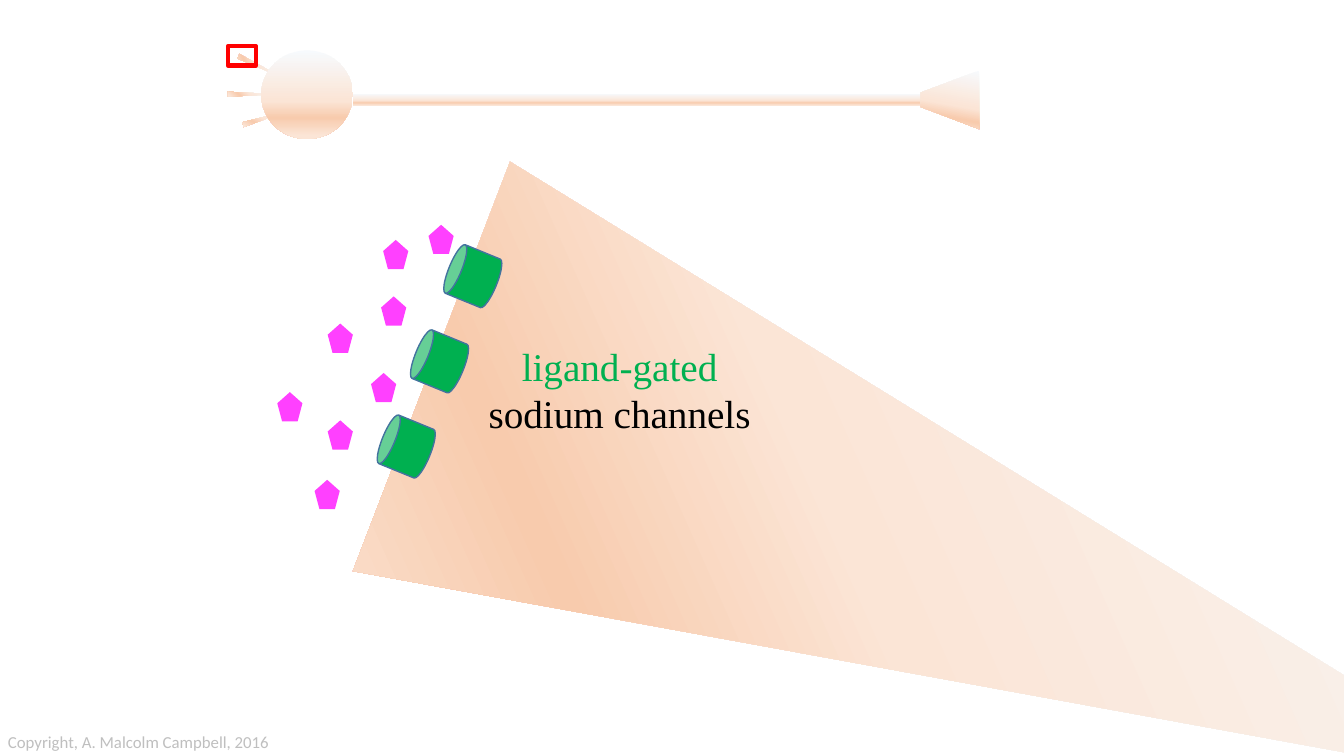
from lxml.etree import SubElement
from pptx import Presentation
from pptx.dml.color import RGBColor
from pptx.enum.shapes import MSO_SHAPE as Shape
from pptx.enum.text import MSO_AUTO_SIZE as Fit, PP_ALIGN as Align
from pptx.oxml.ns import qn
from pptx.util import Inches, Pt

GREEN = RGBColor(0x00, 0xB0, 0x50)
EDGE = RGBColor(0x43, 0x73, 0x9E)
PINK = RGBColor(0xFF, 0x40, 0xFF)
RED = RGBColor(0xFF, 0x00, 0x00)
BLACK = RGBColor(0x00, 0x00, 0x00)
GREY = RGBColor(0xBF, 0xBF, 0xBF)
SKIN = [
    (0, RGBColor(0xF7, 0xFA, 0xFD)),
    (57, RGBColor(0xFB, 0xE5, 0xD6)),
    (76, RGBColor(0xF8, 0xCB, 0xAD)),
    (96, RGBColor(0xFB, 0xE5, 0xD6)),
]


def shade(shape, angle):
    """Fill with the cell gradient, its angle clockwise in degrees."""
    shape.fill.gradient()
    grad = shape.element.spPr.find(qn("a:gradFill"))
    for child in list(grad):
        grad.remove(child)
    grad.set("rotWithShape", "1")
    stops = SubElement(grad, qn("a:gsLst"))
    for place, color in SKIN:
        stop = SubElement(stops, qn("a:gs"), pos=str(place * 1000))
        SubElement(stop, qn("a:srgbClr"), val=str(color))
    SubElement(grad, qn("a:lin"), ang=str(angle * 60000), scaled="0")


def draw(slide, kind, box, fill=None, angle=None, line=None, width=1, turn=0):
    shape = slide.shapes.add_shape(kind, *map(Inches, box))
    shape.shadow.inherit = False
    shape.rotation = turn
    if angle is not None:
        shade(shape, angle)
    elif fill is not None:
        shape.fill.solid()
        shape.fill.fore_color.rgb = fill
    else:
        shape.fill.background()
    if line is None:
        shape.line.fill.background()
    else:
        shape.line.color.rgb = line
        shape.line.width = Pt(width)
    return shape


def write(slide, box, lines, size, font, align=Align.LEFT, wrap=True):
    """Add a text box from (text, color) lines, one paragraph each."""
    frame = slide.shapes.add_textbox(*map(Inches, box)).text_frame
    frame.word_wrap = wrap
    frame.auto_size = Fit.SHAPE_TO_FIT_TEXT
    for i, (text, color) in enumerate(lines):
        para = frame.add_paragraph() if i else frame.paragraphs[0]
        para.alignment = align
        run = para.add_run()
        run.text = text
        run.font.size = Pt(size)
        run.font.name = font
        run.font.color.rgb = color


def add_neuron(slide, x, y):
    """Whole cell: dendrites, body, axon, terminal and the zoom frame."""
    for dx, dy, turn in [(0.3, 0, 116), (0.22, 0.27, 90), (0.36, 0.5, 73)]:
        draw(slide, Shape.ISOSCELES_TRIANGLE, (x + dx, y + dy, 0.05, 0.49),
             angle=45, turn=turn)
    draw(slide, Shape.OVAL, (x + 0.33, y + 0.08, 0.91, 0.88), angle=90)
    draw(slide, Shape.RECTANGLE, (x + 1.24, y + 0.51, 5.64, 0.12), angle=90)
    end = draw(slide, Shape.TRAPEZOID, (x + 6.87, y + 0.28, 0.58, 0.58),
               angle=190, turn=270)
    end.adjustments[0] = 0.377
    draw(slide, Shape.RECTANGLE, (x, y + 0.04, 0.28, 0.19), line=RED, width=3)


def add_ligands(slide, x, y):
    spots = [(1.03, 0.71), (1.05, 0.15), (1.5, 0), (0.37, 2.53),
             (0, 1.66), (0.5, 0.98), (0.5, 1.94), (0.93, 1.47)]
    for dx, dy in spots:
        draw(slide, Shape.REGULAR_PENTAGON, (x + dx, y + dy, 0.25, 0.29),
             fill=PINK)


def add_channels(slide, x, y):
    for i in range(3):
        draw(slide, Shape.CAN, (x - 0.33 * i, y + 0.845 * i, 0.52, 0.5),
             fill=GREEN, line=EDGE, turn=292.3)
    write(slide, (x + 0.26, y + 0.86, 2.91, 1.04),
          [("ligand-gated", GREEN), ("sodium channels", BLACK)],
          28, "Times New Roman", align=Align.CENTER)


def main():
    deck = Presentation()
    deck.slide_width, deck.slide_height = Inches(13.33), Inches(7.5)
    slide = deck.slides.add_slide(deck.slide_layouts[6])
    draw(slide, Shape.ISOSCELES_TRIANGLE, (7.51, -0.08, 4.35, 11.58),
         angle=45, turn=111)
    add_neuron(slide, 2.26, 0.42)
    add_ligands(slide, 2.75, 2.23)
    add_channels(slide, 4.43, 2.49)
    write(slide, (-0.02, 7.21, 2.82, 0.3),
          [("Copyright, A. Malcolm Campbell, 2016", GREY)],
          12, "Calibri", wrap=False)
    deck.save("out.pptx")


if __name__ == "__main__":
    main()
